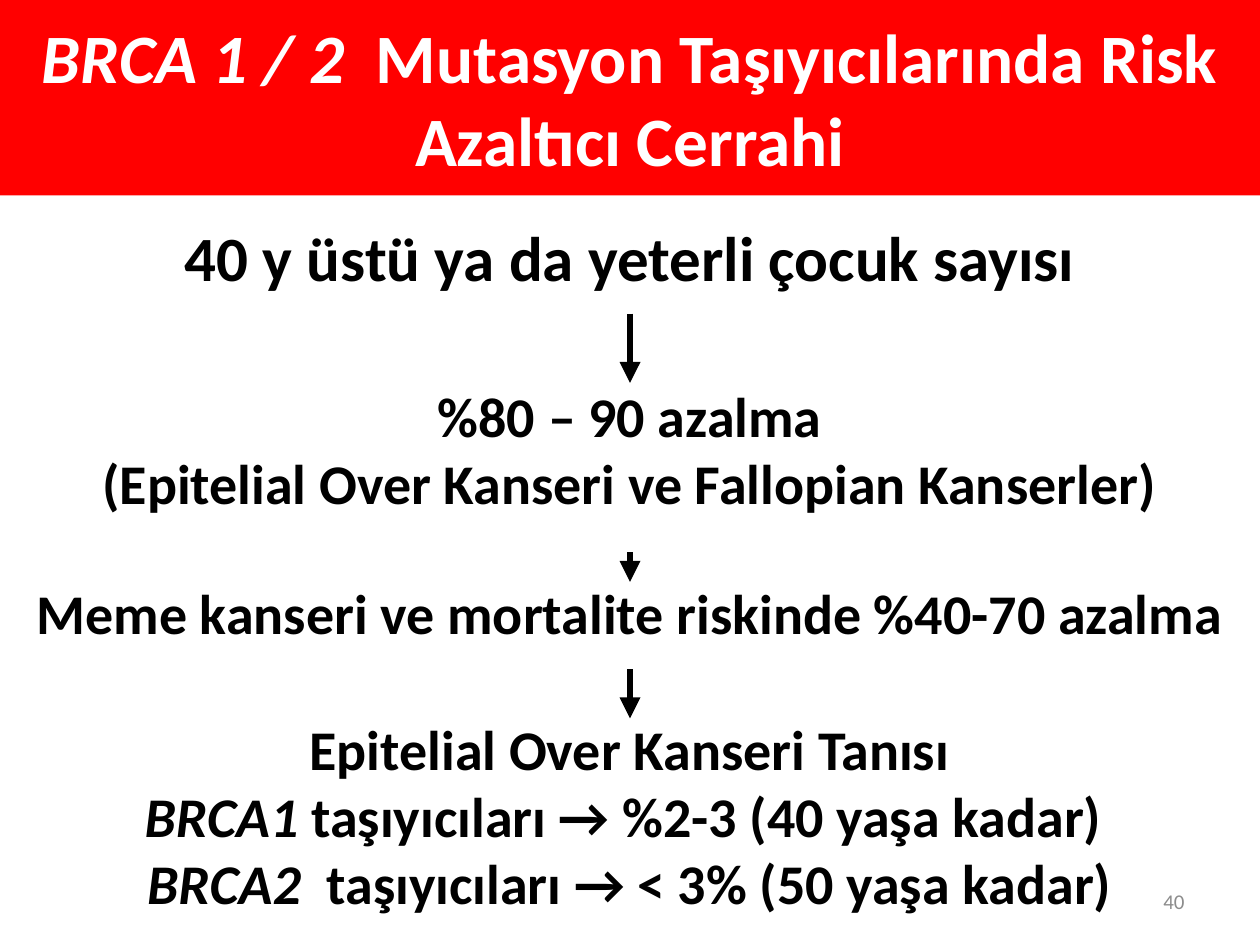
from lxml.etree import SubElement
from pptx import Presentation
from pptx.dml.color import RGBColor
from pptx.enum.shapes import MSO_CONNECTOR as Connector, MSO_SHAPE as Shape
from pptx.enum.text import MSO_ANCHOR as Anchor, PP_ALIGN as Align
from pptx.oxml.ns import qn
from pptx.util import Cm, Pt

COLORS = {"banner": "FF0000", "title": "FFFFFF", "body": "000000", "number": "8C8C8C"}
WIDTH, HEIGHT = 25.4, 19.05


def color(key):
    return RGBColor.from_string(COLORS[key])


def write(frame, lines, size, key, bold=True, align=Align.CENTER):
    """Fill the frame with lines, each a list of (text, italic) runs."""
    for i, line in enumerate(lines):
        paragraph = frame.paragraphs[0] if i == 0 else frame.add_paragraph()
        paragraph.alignment = align
        for text, italic in line:
            run = paragraph.add_run()
            run.text = text
            run.font.name = "Calibri"
            run.font.size = Pt(size)
            run.font.bold = bold
            run.font.italic = italic
            run.font.color.rgb = color(key)


prs = Presentation()
prs.slide_width, prs.slide_height = Cm(WIDTH), Cm(HEIGHT)
slide = prs.slides.add_slide(prs.slide_layouts[6])
shapes = slide.shapes

banner = shapes.add_shape(Shape.RECTANGLE, 0, 0, Cm(WIDTH), Cm(3.94))
banner.shadow.inherit = False
banner.fill.solid()
banner.fill.fore_color.rgb = color("banner")
banner.line.fill.background()
banner.text_frame.vertical_anchor = Anchor.MIDDLE
write(banner.text_frame, [[("BRCA 1 / 2  ", True),
                           ("Mutasyon Taşıyıcılarında Risk Azaltıcı Cerrahi", False)]],
      39.6, "title")

# Steps of the flow: top, height, text size, lines
steps = [
    (4.29, 1.8, 36, [[("40 y üstü ya da yeterli çocuk sayısı", False)]]),
    (7.57, 3, 32, [[("%80 – 90 azalma", False)],
                   [("(Epitelial Over Kanseri ve Fallopian Kanserler)", False)]]),
    (11.53, 1.62, 32, [[("Meme kanseri ve mortalite riskinde %40-70 azalma", False)]]),
    (14.27, 4.37, 32, [[("Epitelial Over Kanseri Tanısı", False)],
                       [("BRCA1", True), (" taşıyıcıları → %2-3 (40 yaşa kadar) ", False)],
                       [("BRCA2", True), ("  taşıyıcıları → < 3% (50 yaşa kadar)", False)]]),
]
for top, height, size, lines in steps:
    step = shapes.add_textbox(0, Cm(top), Cm(WIDTH), Cm(height)).text_frame
    step.word_wrap = True
    write(step, lines, size, "body")

for start, end in [(6.32, 7.72), (11.13, 11.73), (13.49, 14.48)]:
    arrow = shapes.add_connector(Connector.STRAIGHT, Cm(WIDTH / 2), Cm(start),
                                 Cm(WIDTH / 2), Cm(end))
    arrow.line.color.rgb = color("body")
    arrow.line.width = Pt(4)
    SubElement(arrow.line._get_or_add_ln(), qn("a:tailEnd"), type="triangle")
    SubElement(arrow._element.spPr, qn("a:effectLst"))

page_number = shapes.add_textbox(Cm(18.2), Cm(17.66), Cm(5.93), Cm(1.01)).text_frame
page_number.word_wrap = True
page_number.vertical_anchor = Anchor.MIDDLE
write(page_number, [[("40", False)]], 12, "number", bold=False, align=Align.RIGHT)

prs.save("out.pptx")
